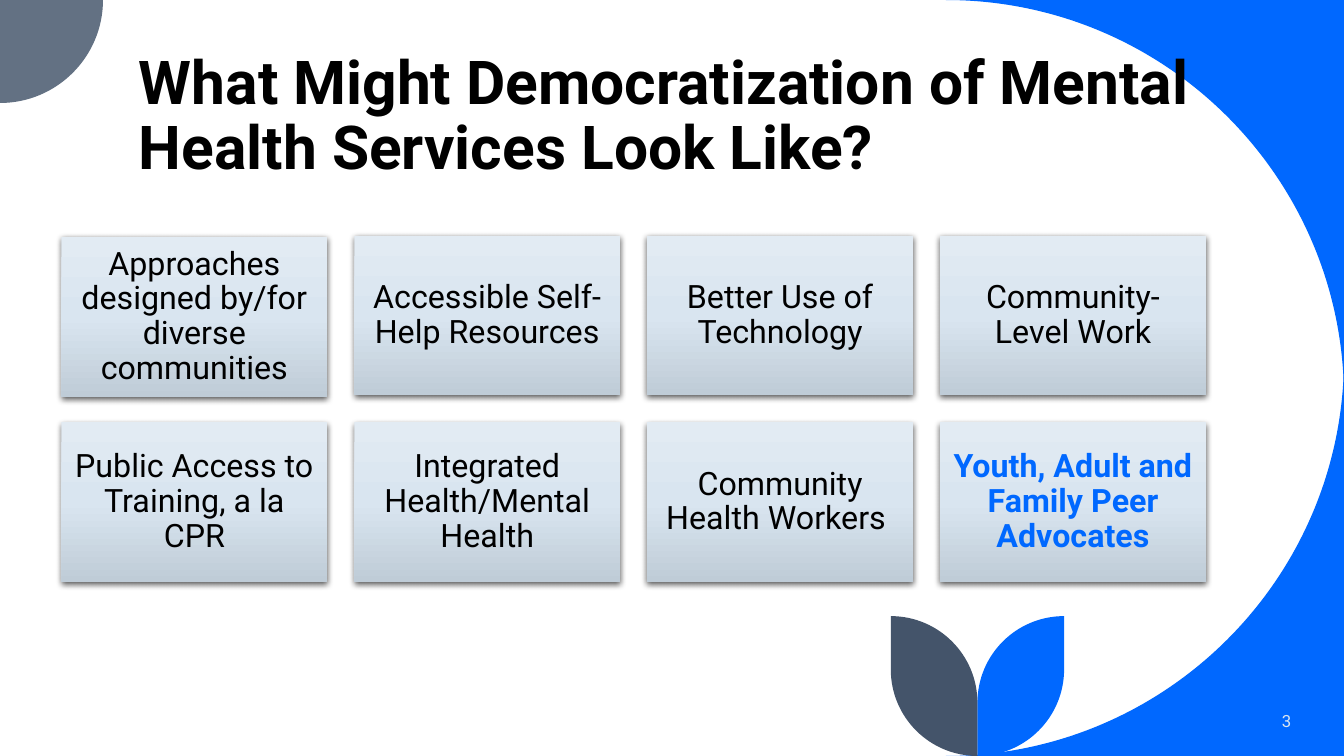
import copy
import math

import lxml.etree
import pptx
import pptx.dml.color
import pptx.enum.shapes
import pptx.enum.text
import pptx.oxml.ns
import pptx.util

Pt = pptx.util.Pt
qn = pptx.oxml.ns.qn
ALIGN = pptx.enum.text.PP_ALIGN
ANCHOR = pptx.enum.text.MSO_ANCHOR

# Content
TITLE = "What Might Democratization of Mental Health Services Look Like?"
SLIDE_NUMBER = "3"
CARDS = [
    ["Approaches designed by/for diverse communities", "Accessible Self-Help Resources",
     "Better Use of Technology", "Community-Level Work"],
    ["Public Access to Training, a la CPR", "Integrated Health/Mental Health",
     "Community Health Workers ", "Youth, Adult and Family Peer Advocates"],
]
HIGHLIGHT = (1, 3)

# Style and layout, in points
COLORS = {"blue": "0068FF", "gray": "637183", "slate": "44546A", "text": "000000",
          "number": "DAE5EF", "shadow": "000000"}
CARD_GRADIENT = [(0, "E2EBF3"), (0.5, "D9E5F0"), (1, "BFCCD7")]
FONT = "Roboto"
WIDTH, HEIGHT = 960, 540
CARD_LEFT, CARD_TOP = 43.9, 168.5
CARD_WIDTH, CARD_HEIGHT = 190, 114
COLUMN_STEP, ROW_STEP = 209.2, 133.2
FIRST_CARD_DROP = 0.9
CORNER_RADIUS, SPOT_RADIUS = 284.4, 73.6
STEM, LEAF_TOP, LEAF_RADIUS = 698.2, 440.1, 61.9
CURVE_RATIO = 0.5523  # Bezier handle length of a quarter circle


def rgb(value):
    return pptx.dml.color.RGBColor.from_string(value)


def write(shape, text, size, color=COLORS["text"], bold=False, align=ALIGN.LEFT,
          anchor=ANCHOR.MIDDLE, line_spacing=1.0):
    frame = shape.text_frame
    frame.word_wrap = True
    frame.auto_size = pptx.enum.text.MSO_AUTO_SIZE.NONE
    frame.vertical_anchor = anchor
    paragraph = frame.paragraphs[0]
    paragraph.alignment = align
    paragraph.line_spacing = line_spacing
    run = paragraph.add_run()
    run.text = text
    run.font.name = FONT
    run.font.size = Pt(size)
    run.font.bold = bold
    run.font.color.rgb = rgb(color)


def quarter(center_x, center_y, radius, start):
    """A line to the start of a quarter circle, then the curve along it."""
    cosine, sine = math.cos(math.radians(start)), math.sin(math.radians(start))

    def point(along, across):
        return (center_x + radius * (along * cosine - across * sine),
                center_y + radius * (along * sine + across * cosine))

    return [[point(1, 0)], [point(1, CURVE_RATIO), point(CURVE_RATIO, 1), point(0, 1)]]


def add_outline(slide, segments, color):
    """Draw segments: one point is a straight line, three are a curve."""
    points = [(x * 100, y * 100) for segment in segments for x, y in segment]
    builder = slide.shapes.build_freeform(*points[0], scale=Pt(1) / 100)
    builder.add_line_segments(points[1:], close=True)
    shape = builder.convert_to_shape()
    shape.shadow.inherit = False
    shape.fill.solid()
    shape.fill.fore_color.rgb = rgb(color)
    shape.line.fill.background()
    # Join the three points of each curve
    lines = iter(list(shape.element.iter(qn("a:lnTo"))))
    for segment in segments[1:]:
        parts = [next(lines) for _ in segment]
        if len(parts) == 3:
            parts[0].tag = qn("a:cubicBezTo")
            for part in parts[1:]:
                parts[0].append(part[0])
                part.getparent().remove(part)


def add_card(slide, left, top):
    card = slide.shapes.add_shape(pptx.enum.shapes.MSO_SHAPE.RECTANGLE, Pt(left), Pt(top),
                                  Pt(CARD_WIDTH), Pt(CARD_HEIGHT))
    card.line.fill.background()
    card.fill.gradient()
    card.fill.gradient_angle = 270
    properties = card.element.spPr
    first_stop = properties.find(".//" + qn("a:gs"))
    first_stop.addnext(copy.deepcopy(first_stop))
    for stop, (position, color) in zip(card.fill.gradient_stops, CARD_GRADIENT):
        stop.position = position
        stop.color.rgb = rgb(color)
    # Soft shadow below the card
    card.shadow.inherit = False
    effects = properties.find(qn("a:effectLst"))
    shadow = lxml.etree.SubElement(effects, qn("a:outerShdw"), blurRad=str(Pt(4.5)),
                                   dist=str(Pt(1.5)), dir="5400000", algn="ctr", rotWithShape="0")
    tint = lxml.etree.SubElement(shadow, qn("a:srgbClr"), val=COLORS["shadow"])
    lxml.etree.SubElement(tint, qn("a:alpha"), val="63000")
    return card


def main():
    presentation = pptx.Presentation()
    presentation.slide_width, presentation.slide_height = Pt(WIDTH), Pt(HEIGHT)
    slide = presentation.slides.add_slide(presentation.slide_layouts[5])

    # Corner decorations
    center = WIDTH - CORNER_RADIUS
    add_outline(slide, quarter(center, CORNER_RADIUS, CORNER_RADIUS, -90) + [[(WIDTH, 0)]],
                COLORS["blue"])
    add_outline(slide, quarter(center, HEIGHT - CORNER_RADIUS, CORNER_RADIUS, 0)
                + [[(WIDTH, HEIGHT)]], COLORS["blue"])
    add_outline(slide, quarter(0, 0, SPOT_RADIUS, 0) + [[(0, 0)]], COLORS["gray"])

    # Two leaves, mirrored about the stem
    leaf = (quarter(STEM, HEIGHT - LEAF_RADIUS, LEAF_RADIUS, 0)
            + quarter(STEM + LEAF_RADIUS, LEAF_TOP + LEAF_RADIUS, LEAF_RADIUS, 180))
    mirrored_leaf = [[(2 * STEM - x, y) for x, y in segment] for segment in leaf]
    add_outline(slide, leaf, COLORS["blue"])
    add_outline(slide, mirrored_leaf, COLORS["slate"])

    # Title, in front of the decorations
    title = slide.shapes.title
    title.left, title.top, title.width, title.height = Pt(92), Pt(30), Pt(769.7), Pt(104.2)
    write(title, TITLE, 43.2, bold=True, anchor=ANCHOR.BOTTOM, line_spacing=0.9)
    title.element.getparent().append(title.element)

    # Slide number
    number = slide.shapes.add_textbox(Pt(799.2), Pt(500.4), Pt(130.3), Pt(28.8))
    write(number, SLIDE_NUMBER, 12, COLORS["number"], align=ALIGN.RIGHT)

    # Card grid
    for row, texts in enumerate(CARDS):
        for column, text in enumerate(texts):
            drop = FIRST_CARD_DROP if (row, column) == (0, 0) else 0
            card = add_card(slide, CARD_LEFT + column * COLUMN_STEP,
                            CARD_TOP + row * ROW_STEP + drop)
            marked = (row, column) == HIGHLIGHT
            write(card, text, 23, COLORS["blue" if marked else "text"], bold=marked,
                  align=ALIGN.CENTER, line_spacing=0.9)

    presentation.save("out.pptx")


if __name__ == "__main__":
    main()
